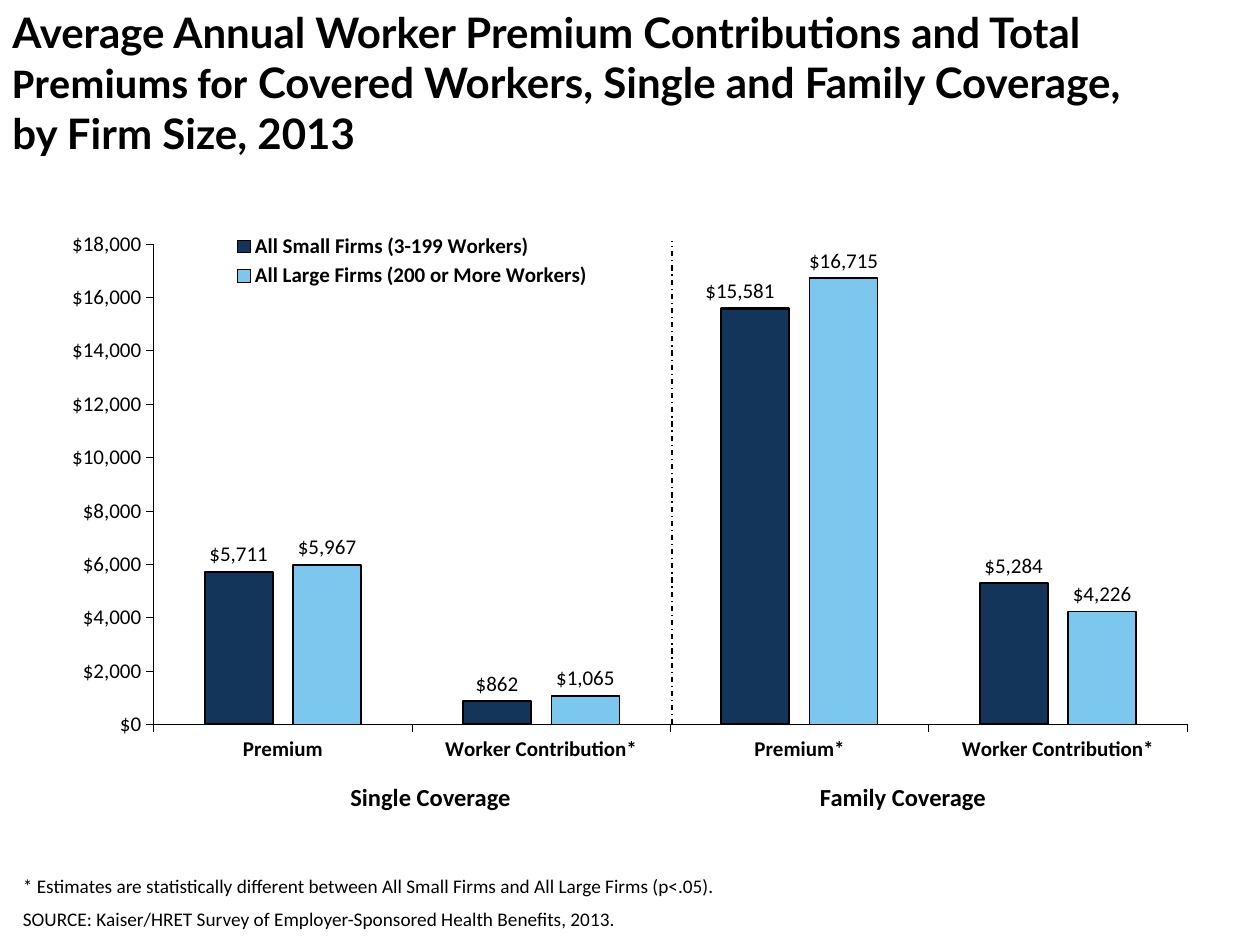
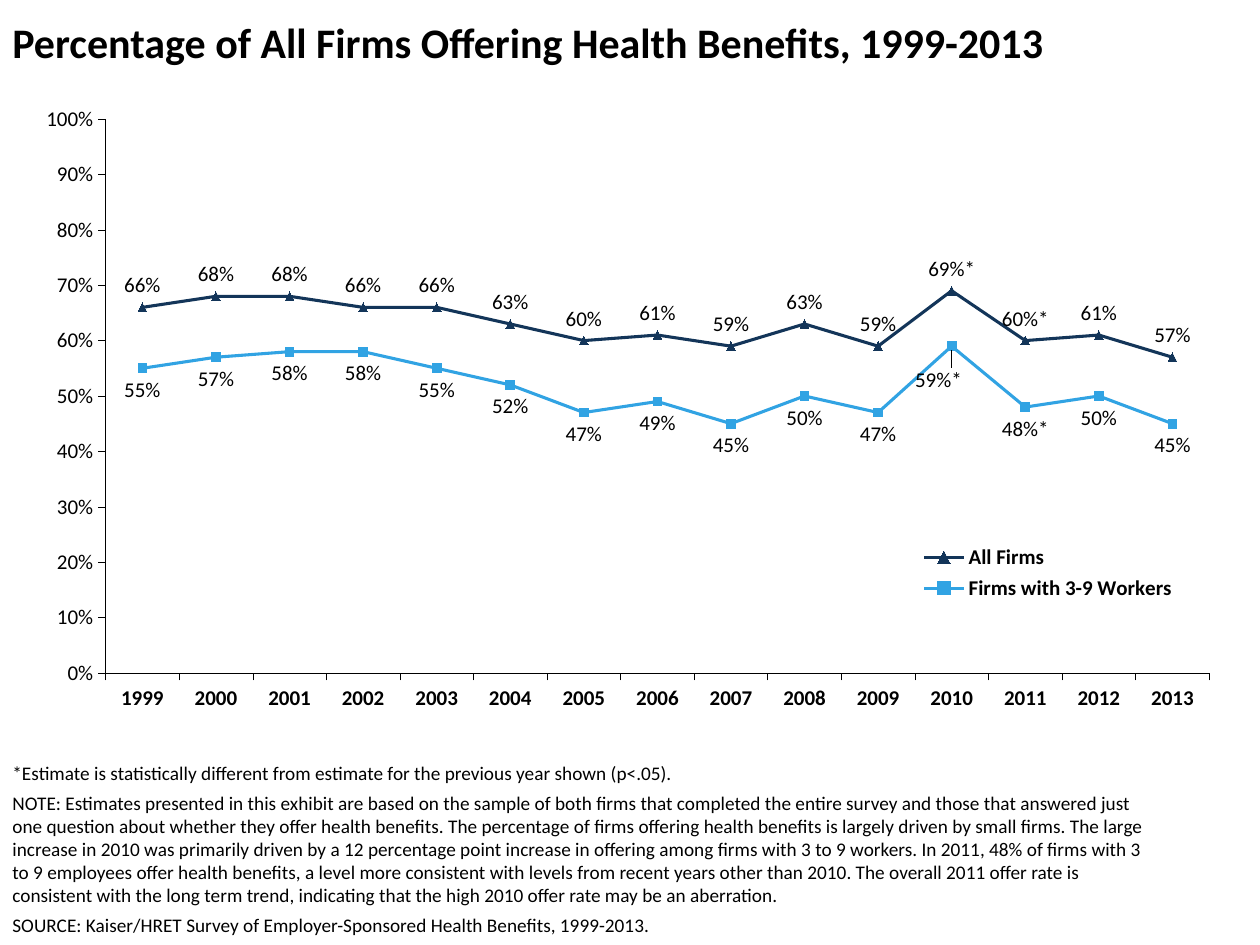
from lxml import etree
from pptx import Presentation
from pptx import util as u
from pptx.chart import data as chart_data
from pptx.dml import color as dml
from pptx.enum import chart as charts, dml as lines, shapes, text
from pptx.oxml import ns

COLOURS = {"ink": "000000", "navy": "133559", "sky": "7BC7ED", "blue": "31A3E3"}
FONT = "Calibri"
TITLE_FONT = "Lato"
LABEL_SIZE = 12
NOTE_SIZE = 11
DOLLARS = '"$"#,##0'
PERCENT = "0%"


def rgb(name):
    return dml.RGBColor.from_string(COLOURS[name])


def add_layout(parent, index, x, y, w=None, h=None, inner=False):
    """Place a chart part by fractions of the chart; labels take x and y offsets only."""
    for old in parent.findall(ns.qn("c:layout")):
        parent.remove(old)
    layout = etree.Element(ns.qn("c:layout"))
    manual = etree.SubElement(layout, ns.qn("c:manualLayout"))
    settings = [("layoutTarget", "inner")] if inner else []
    if w is not None:
        settings += [("xMode", "edge"), ("yMode", "edge")]
    settings += [("x", x), ("y", y)]
    if w is not None:
        settings += [("w", w), ("h", h)]
    for tag, value in settings:
        etree.SubElement(manual, ns.qn("c:" + tag)).set("val", str(value))
    parent.insert(index, layout)


class Deck:
    def __init__(self):
        self.presentation = Presentation()
        self.presentation.slide_width = u.Pt(720)
        self.presentation.slide_height = u.Pt(540)
        self.slide = None

    def new_slide(self):
        self.slide = self.presentation.slides.add_slide(self.presentation.slide_layouts[6])

    def style(self, font, size, bold=False, name=FONT):
        font.size, font.bold, font.name = u.Pt(size), bold, name
        font.color.rgb = rgb("ink")

    def text(self, box, paragraphs, size, bold=False, align=text.PP_ALIGN.LEFT, gap=0):
        """Each paragraph is a string or a list of (words, font name) runs."""
        frame = self.slide.shapes.add_textbox(*map(u.Pt, box)).text_frame
        frame.word_wrap = True
        for number, content in enumerate(paragraphs):
            paragraph = frame.add_paragraph() if number else frame.paragraphs[0]
            paragraph.alignment = align
            if number:
                paragraph.space_before = u.Pt(gap)
            runs = [(content, FONT)] if isinstance(content, str) else content
            for words, name in runs:
                run = paragraph.add_run()
                run.text = words
                self.style(run.font, size, bold, name)
        return frame

    def title(self, box, runs):
        self.text(box, [runs], 24, bold=True)

    def divider(self, x, top, bottom):
        connector = self.slide.shapes.add_connector(
            shapes.MSO_CONNECTOR.STRAIGHT, u.Pt(x), u.Pt(bottom), u.Pt(x), u.Pt(top))
        connector.line.color.rgb = rgb("ink")
        connector.line.width = u.Pt(0.75)
        connector.line.dash_style = lines.MSO_LINE.DASH_DOT
        etree.SubElement(connector._element.spPr, ns.qn("a:effectLst"))

    def chart(self, kind, box, categories, series, number_format, top, step, plot, legend):
        data = chart_data.CategoryChartData(number_format=number_format)
        data.categories = categories
        for name, values in series:
            data.add_series(name, values)
        chart = self.slide.shapes.add_chart(kind, *map(u.Pt, box), data).chart
        chart.has_title = False
        self.style(chart.font, NOTE_SIZE, bold=True)
        chart.plots[0].vary_by_categories = False

        # Axes
        for axis, bold in ((chart.category_axis, True), (chart.value_axis, False)):
            axis.has_major_gridlines = False
            axis.major_tick_mark = charts.XL_TICK_MARK.OUTSIDE
            axis.minor_tick_mark = charts.XL_TICK_MARK.NONE
            axis.format.line.color.rgb = rgb("ink")
            axis.format.line.width = u.Pt(0.25)
            self.style(axis.tick_labels.font, LABEL_SIZE, bold)
        value_axis = chart.value_axis
        value_axis.minimum_scale, value_axis.maximum_scale = 0, top
        value_axis.major_unit = step
        value_axis.tick_labels.number_format = number_format
        value_axis.tick_labels.number_format_is_linked = False

        # Legend and plot area
        chart.has_legend = True
        chart.legend.position = charts.XL_LEGEND_POSITION.BOTTOM
        chart.legend.include_in_layout = False
        self.style(chart.legend.font, LABEL_SIZE, bold=True)
        add_layout(chart.legend._element, 1, *legend)
        add_layout(chart._chartSpace.chart.plotArea, 0, *plot, inner=True)
        return chart

    def value_labels(self, series, position, number_format):
        labels = series.data_labels
        labels.show_value = True
        labels.position = position
        labels.number_format = number_format
        labels.number_format_is_linked = False
        self.style(labels.font, LABEL_SIZE)

    def point_label(self, series, index, position, words=None, shift=None):
        label = series.points[index].data_label
        if words:
            paragraph = label.text_frame.paragraphs[0]
            paragraph.text = words
            self.style(paragraph.runs[0].font, LABEL_SIZE)
        else:
            self.style(label.font, LABEL_SIZE)
        label.position = position
        if shift:
            element = series._element.xpath(f'c:dLbls/c:dLbl[c:idx/@val="{index}"]')[0]
            add_layout(element, 1, *shift)


def premiums_slide(deck):
    deck.new_slide()
    chart = deck.chart(
        charts.XL_CHART_TYPE.COLUMN_CLUSTERED, (18, 94.4, 678, 391.6),
        ["Premium", "Worker Contribution*", "Premium*", "Worker Contribution*"],
        [("All Small Firms (3-199 Workers)", (5711, 862, 15581, 5284)),
         ("All Large Firms (200 or More Workers)", (5967, 1065, 16715, 4226))],
        DOLLARS, 18000, 2000,
        plot=(0.103, 0.115, 0.871, 0.701), legend=(0.166, 0.094, 0.31, 0.092))
    bars = chart.plots[0]
    bars.gap_width, bars.overlap = 150, -30
    above = charts.XL_LABEL_POSITION.OUTSIDE_END
    for series, fill, width in zip(bars.series, ("navy", "sky"), (1.25, 0.92)):
        series.format.fill.solid()
        series.format.fill.fore_color.rgb = rgb(fill)
        series.format.line.color.rgb = rgb("ink")
        series.format.line.width = u.Pt(width)
        deck.value_labels(series, above, DOLLARS)
    deck.point_label(bars.series[0], 2, above, shift=(-0.013, 0))

    # Coverage groups
    for name, left, width in (("Single Coverage", 168, 156), ("Family Coverage", 426, 180)):
        deck.text((left, 443.5, width, 24.5), [name], 14, True, text.PP_ALIGN.CENTER)
    deck.divider(384, 138, 414)

    deck.title((0, 0, 666, 84), [
        ("Average Annual Worker Premium Contributions and Total ", TITLE_FONT),
        ("Premiums for", FONT),
        (" Covered Workers, Single and Family Coverage, by Firm Size, 2013", TITLE_FONT)])
    notes = deck.text((6, 498, 654, 39), [
        "* Estimates are statistically different between All Small Firms and All Large Firms "
        "(p<.05).",
        "SOURCE: Kaiser/HRET Survey of Employer-Sponsored Health Benefits, 2013.",
    ], NOTE_SIZE, gap=5.5)
    notes.paragraphs[0].line_spacing = 0.85


def offer_rate_slide(deck):
    deck.new_slide()
    chart = deck.chart(
        charts.XL_CHART_TYPE.LINE_MARKERS, (15, 59, 687, 349),
        [str(year) for year in range(1999, 2014)],
        [("All Firms", (0.66, 0.68, 0.68, 0.66, 0.66, 0.63, 0.6, 0.61, 0.59, 0.63, 0.59,
                        0.69, 0.6, 0.61, 0.57)),
         ("Firms with 3-9 Workers", (0.55, 0.57, 0.58, 0.58, 0.55, 0.52, 0.47, 0.49, 0.45,
                                     0.5, 0.47, 0.59, 0.48, 0.5, 0.45))],
        PERCENT, 1, 0.1,
        plot=(0.066, 0.026, 0.918, 0.907), legend=(0.74, 0.714, 0.22, 0.11))
    position, marker = charts.XL_LABEL_POSITION, charts.XL_MARKER_STYLE
    looks = (
        ("navy", marker.TRIANGLE, position.ABOVE, {11: ("69%*", None), 12: ("60%*", None)}),
        ("blue", marker.SQUARE, position.BELOW,
         {11: ("59%*", (-0.011, 0.02)), 12: ("48%*", None)}),
    )
    for series, (colour, symbol, place, starred) in zip(chart.plots[0].series, looks):
        series.smooth = False
        series.format.line.color.rgb = rgb(colour)
        series.format.line.width = u.Pt(1.75)
        series.marker.style, series.marker.size = symbol, 5
        series.marker.format.fill.solid()
        series.marker.format.fill.fore_color.rgb = rgb(colour)
        series.marker.format.line.color.rgb = rgb(colour)
        deck.value_labels(series, place, PERCENT)
        for index, (words, shift) in starred.items():
            deck.point_label(series, index, place, words, shift)

    deck.title((0, 6, 690, 60),
               [("Percentage of All Firms Offering Health Benefits, 1999-2013", FONT)])
    deck.text((0, 431.3, 666, 108.7), [
        "*Estimate is statistically different from estimate for the previous year shown (p<.05).",
        "NOTE: Estimates presented in this exhibit are based on the sample of both firms that "
        "completed the entire survey and those that answered just one question about whether "
        "they offer health benefits. The percentage of firms offering health benefits is largely "
        "driven by small firms. The large increase in 2010 was primarily driven by a 12 "
        "percentage point increase in offering among firms with 3 to 9 workers. In 2011, 48% of "
        "firms with 3 to 9 employees offer health benefits, a level more consistent with levels "
        "from recent years other than 2010. The overall 2011 offer rate is consistent with the "
        "long term trend, indicating that the high 2010 offer rate may be an aberration.",
        "SOURCE: Kaiser/HRET Survey of Employer-Sponsored Health Benefits, 1999-2013.",
    ], NOTE_SIZE, gap=4)


def main():
    deck = Deck()
    premiums_slide(deck)
    offer_rate_slide(deck)
    deck.presentation.save("out.pptx")


if __name__ == "__main__":
    main()
